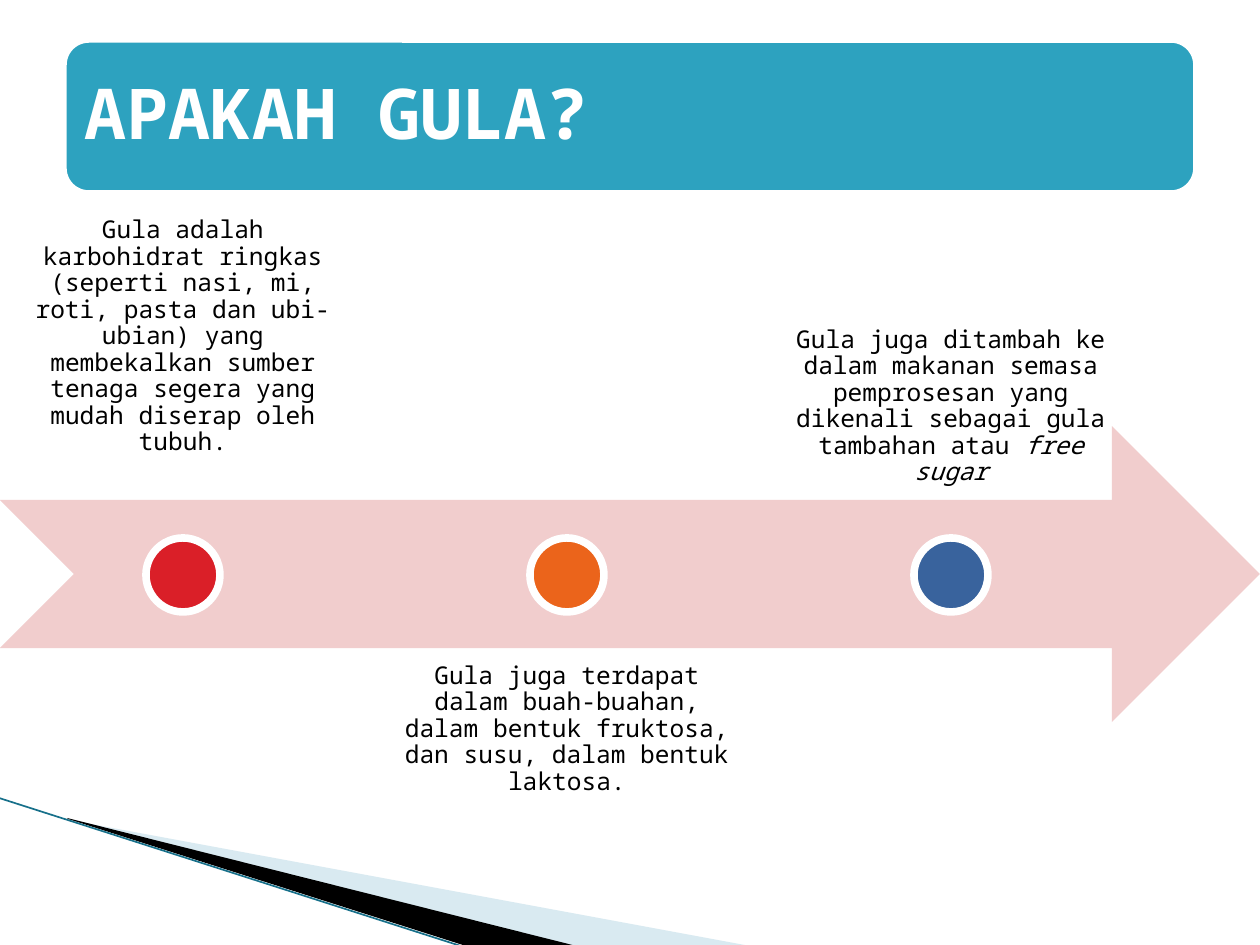
from lxml.etree import SubElement
from pptx import Presentation
from pptx.dml.color import RGBColor
from pptx.enum.shapes import MSO_CONNECTOR, MSO_SHAPE
from pptx.enum.text import MSO_ANCHOR, PP_ALIGN
from pptx.oxml.ns import qn
from pptx.util import Emu, Pt

SLIDE_WIDTH, SLIDE_HEIGHT = 1260, 945
SCALE = 9144000 / SLIDE_WIDTH
WHITE, BLACK = "FFFFFF", "000000"


def px(length):
    return Emu(round(length * SCALE))


def color(value):
    return RGBColor.from_string(value)


def write(shape, *spans, size=14, ink=BLACK, bold=False, align=PP_ALIGN.CENTER,
          anchor=MSO_ANCHOR.TOP, inset=14, bottom=None):
    """Fill a shape with one paragraph; each span is (text, italic)."""
    frame = shape.text_frame
    frame.word_wrap = True
    frame.vertical_anchor = anchor
    frame.margin_left = frame.margin_top = frame.margin_right = px(inset)
    frame.margin_bottom = px(inset if bottom is None else bottom)
    para = frame.paragraphs[0]
    para.alignment = align
    para.line_spacing = 0.9
    for text, italic in spans:
        span = para.add_run()
        span.text = text
        font = span.font
        font.name, font.size = "Noto Sans Mono", Pt(size)
        font.bold, font.italic = bold, italic
        font.color.rgb = color(ink)


class Painter:
    """Holds the slide and the style shared by its elements."""

    outline_width = Pt(4.33)

    def __init__(self, slide):
        self.shapes = slide.shapes

    def paint(self, shape, fill, outline=None, alpha=None):
        shape.shadow.inherit = False
        shape.fill.solid()
        shape.fill.fore_color.rgb = color(fill)
        if alpha is not None:
            solid = shape.fill._xPr.find(qn("a:solidFill"))
            SubElement(solid[0], qn("a:alpha"), val=str(alpha * 1000))
        if outline:
            shape.line.color.rgb = color(outline)
            shape.line.width = self.outline_width
        else:
            shape.line.fill.background()
        return shape

    def preset(self, kind, left, top, width, height, fill, outline=None):
        shape = self.shapes.add_shape(kind, px(left), px(top), px(width), px(height))
        return self.paint(shape, fill, outline)

    def polygon(self, points, fill, alpha=None):
        builder = self.shapes.build_freeform(*points[0], scale=SCALE)
        builder.add_line_segments(points[1:], close=True)
        return self.paint(builder.convert_to_shape(), fill, alpha=alpha)

    def line(self, start, end, ink, width):
        connector = self.shapes.add_connector(
            MSO_CONNECTOR.STRAIGHT, *map(px, start + end))
        connector.line.color.rgb = color(ink)
        connector.line.width = Pt(width)
        SubElement(connector._element.spPr, qn("a:effectLst"))

    def text(self, left, top, width, height, *spans, **style):
        box = self.shapes.add_textbox(px(left), px(top), px(width), px(height))
        write(box, *spans, **style)


def main():
    deck = Presentation()
    deck.slide_width, deck.slide_height = px(SLIDE_WIDTH), px(SLIDE_HEIGHT)
    painter = Painter(deck.slides.add_slide(deck.slide_layouts[6]))

    painter.polygon([(69, 820), (750, 946), (575, 946), (69, 819)], "A0CBDC", alpha=40)
    painter.polygon([(67, 818), (576, 946), (469, 947), (68, 819)], BLACK)
    painter.line((-1, 798), (467, 948), "17708A", 0.95)

    painter.preset(MSO_SHAPE.NOTCHED_RIGHT_ARROW, 0, 426, SLIDE_WIDTH, 296, "F1CDCD")

    above = dict(top=204, anchor=MSO_ANCHOR.BOTTOM)
    below = dict(top=649, anchor=MSO_ANCHOR.TOP)
    facts = [
        ("DA1F28", dict(above, bottom=44),
         [("Gula adalah karbohidrat ringkas (seperti nasi, mi, roti, pasta dan "
           "ubi-ubian) yang membekalkan sumber tenaga segera yang mudah diserap "
           "oleh tubuh.", False)]),
        ("EB641B", below,
         [("Gula juga terdapat dalam buah-buahan, dalam bentuk fruktosa, dan susu, "
           "dalam bentuk laktosa.", False)]),
        ("39639D", above,
         [("Gula juga ditambah ke dalam makanan semasa pemprosesan yang dikenali "
           "sebagai gula tambahan atau ", False), ("free sugar", True)]),
    ]
    fact_width, fact_height, step, dot = 366, 296, 384, 74
    for index, (fill, place, spans) in enumerate(facts):
        left = index * step
        style = dict(place)
        painter.text(left, style.pop("top"), fact_width, fact_height, *spans, **style)
        painter.preset(MSO_SHAPE.OVAL, left + (fact_width - dot) // 2, 538, dot, dot,
                       fill, WHITE)

    title = painter.preset(MSO_SHAPE.ROUNDED_RECTANGLE, 63, 39, 1134, 155,
                           "2DA2BF", WHITE)
    write(title, ("APAKAH GULA?", False), size=40, ink=WHITE, bold=True,
          align=PP_ALIGN.LEFT, anchor=MSO_ANCHOR.MIDDLE, inset=14)
    deck.save("out.pptx")


if __name__ == "__main__":
    main()
